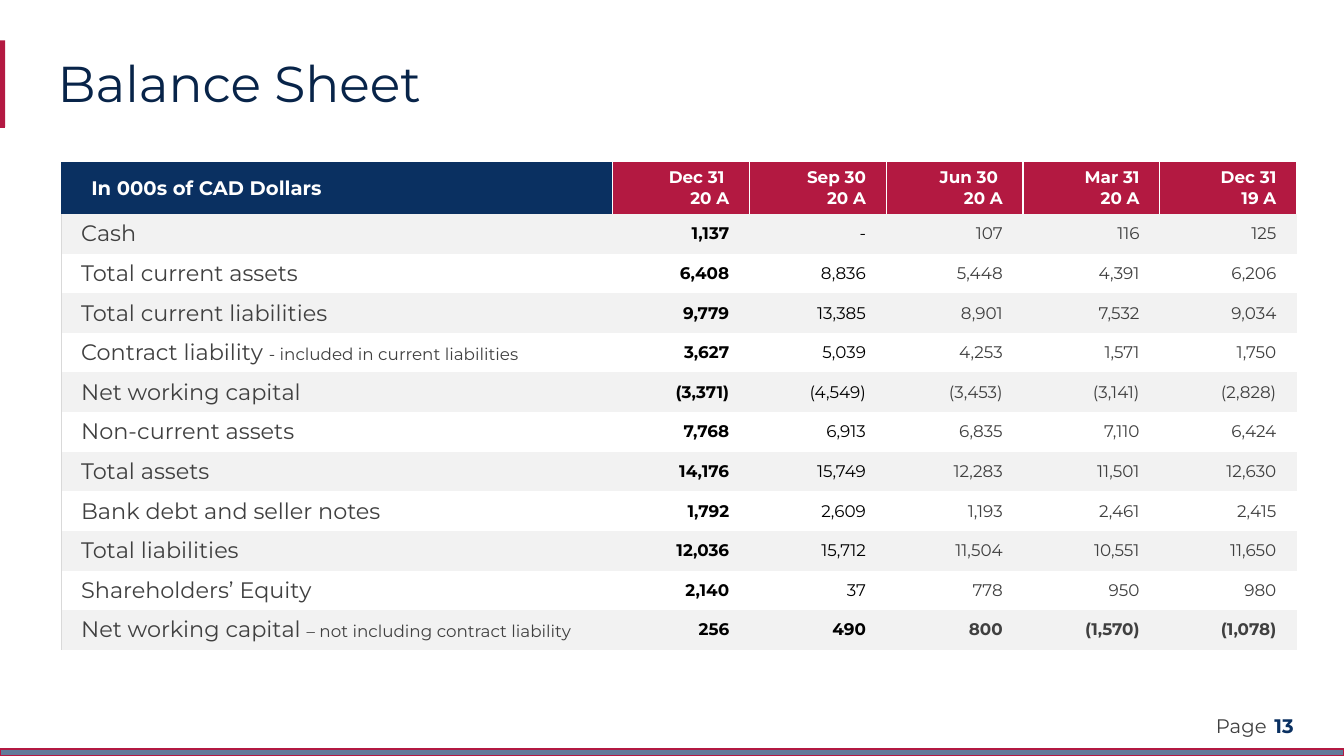
from dataclasses import dataclass
from typing import NamedTuple

from lxml import etree
from pptx import Presentation
from pptx import util as u
from pptx.dml.color import RGBColor
from pptx.enum import shapes, text
from pptx.oxml import ns


@dataclass(frozen=True)
class Theme:
    font: str = "Montserrat"
    navy: str = "0A3061"
    title: str = "082449"
    red: str = "B31941"
    edge: str = "B31942"
    slate: str = "617B9A"
    gray: str = "404040"
    black: str = "000000"
    white: str = "FFFFFF"
    band: str = "F2F2F2"
    rule: str = "D9D9D9"
    head: int = 36
    label: int = 16
    page: int = 14
    small: int = 12


class Box(NamedTuple):
    left: float
    top: float
    width: float
    height: float


class Span(NamedTuple):
    words: str
    size: int
    color: str
    bold: bool = False


class Bar(NamedTuple):
    box: Box
    fill: str
    line: str | None = None


class Tag(NamedTuple):
    box: Box
    span: Span


class Row(NamedTuple):
    label: str
    note: str
    values: str
    bold: bool = False


T = Theme()
WIDE, HIGH = u.Inches(13.33), u.Inches(7.5)
PLAIN = "{2D5ABB26-0587-4C30-8999-92F81FD0307C}"
GRID = Box(4.54, 21.47, 91.94, 64.49)
FIRST, REST = 41.04, 10.18
TOP, BODY = 6.85, 5.24
DATES = [("Dec 31 ", "20 A"), ("Sep 30", "20 A"), ("Jun 30 ", "20 A"),
         ("Mar 31", "20 A"), ("Dec 31", "19 A")]
ROWS = [
    Row("Cash", "", "1,137 - 107 116 125"),
    Row("Total current assets", "", "6,408 8,836 5,448 4,391 6,206"),
    Row("Total current liabilities", "", "9,779 13,385 8,901 7,532 9,034"),
    Row("Contract liability ", "- included in current liabilities",
        "3,627 5,039 4,253 1,571 1,750"),
    Row("Net working capital", "", "(3,371) (4,549) (3,453) (3,141) (2,828)"),
    Row("Non-current assets", "", "7,768 6,913 6,835 7,110 6,424"),
    Row("Total assets", "", "14,176 15,749 12,283 11,501 12,630"),
    Row("Bank debt and seller notes", "", "1,792 2,609 1,193 2,461 2,415"),
    Row("Total liabilities", "", "12,036 15,712 11,504 10,551 11,650"),
    Row("Shareholders’ Equity", "", "2,140 37 778 950 980"),
    Row("Net working capital ", "– not including contract liability",
        "256 490 800 (1,570) (1,078)", True),
]
BARS = [
    Bar(Box(0, 5.33, 0.38, 11.47), T.red),
    Bar(Box(0, 99.07, 100, 0.93), T.slate, T.edge),
]
TAGS = [
    Tag(Box(90.47, 94.4, 4.3, 3.2), Span("Page", T.page, T.gray)),
    Tag(Box(94.82, 94.4, 2.48, 3.2), Span("13", T.page, T.navy, True)),
]


def across(share: float) -> int:
    return round(WIDE * share / 100)


def down(share: float) -> int:
    return round(HIGH * share / 100)


def place(box: Box) -> tuple[int, int, int, int]:
    return across(box.left), down(box.top), across(box.width), down(box.height)


def tint(name: str) -> RGBColor:
    return RGBColor.from_string(name)


def write(par, *spans: Span) -> None:
    for span in spans:
        run = par.add_run()
        run.text = span.words
        run.font.name = T.font
        run.font.size = u.Pt(span.size)
        run.font.bold = span.bold
        run.font.color.rgb = tint(span.color)


def border(cell, sides: str, color: str, points: float) -> None:
    props = cell._tc.get_or_add_tcPr()
    for spot, side in enumerate(sides):
        line = etree.Element(ns.qn(f"a:ln{side}"), w=str(u.Pt(points)))
        fill = etree.SubElement(line, ns.qn("a:solidFill"))
        etree.SubElement(fill, ns.qn("a:srgbClr"), val=color)
        props.insert(spot, line)


def fill_cell(cell, lines: list[list[Span]], color: str,
              right: bool = False, pad: tuple[float, float] = (0.2, 0.2),
              middle: bool = True) -> None:
    cell.margin_left, cell.margin_right = map(u.Inches, pad)
    cell.margin_top = cell.margin_bottom = u.Inches(0.05)
    cell.vertical_anchor = (text.MSO_ANCHOR.MIDDLE if middle
                            else text.MSO_ANCHOR.TOP)
    cell.fill.solid()
    cell.fill.fore_color.rgb = tint(color)
    frame = cell.text_frame
    for spot, spans in enumerate(lines):
        par = frame.add_paragraph() if spot else frame.paragraphs[0]
        par.alignment = text.PP_ALIGN.RIGHT if right else text.PP_ALIGN.LEFT
        write(par, *spans)


def draw_bar(slide, bar: Bar) -> None:
    shape = slide.shapes.add_shape(shapes.MSO_SHAPE.RECTANGLE, *place(bar.box))
    shape.shadow.inherit = False
    shape.fill.solid()
    shape.fill.fore_color.rgb = tint(bar.fill)
    if bar.line:
        shape.line.color.rgb = tint(bar.line)
        shape.line.width = u.Pt(1)
    else:
        shape.line.fill.background()


def draw_edge(slide) -> None:
    line = slide.shapes.add_connector(
        shapes.MSO_CONNECTOR.STRAIGHT,
        across(0.15), down(16.93), across(0.15), down(9.07))
    line.line.color.rgb = tint(T.edge)
    line.line.width = u.Pt(4)
    etree.SubElement(line._element.spPr, ns.qn("a:effectLst"))


def draw_tag(slide, tag: Tag) -> None:
    frame = slide.shapes.add_textbox(*place(tag.box)).text_frame
    frame.margin_left = frame.margin_right = 0
    frame.margin_top = frame.margin_bottom = 0
    frame.vertical_anchor = text.MSO_ANCHOR.MIDDLE
    frame.word_wrap = True
    write(frame.paragraphs[0], tag.span)


def draw_title(slide) -> None:
    title = slide.shapes.title
    title.left, title.top, title.width, title.height = place(
        Box(3.53, 7.07, 93.02, 8.67))
    title.text_frame.vertical_anchor = text.MSO_ANCHOR.MIDDLE
    par = title.text_frame.paragraphs[0]
    par.alignment = text.PP_ALIGN.LEFT
    par.line_spacing = 0.9
    write(par, Span("Balance Sheet", T.head, T.title))


def draw_table(slide) -> None:
    table = slide.shapes.add_table(
        len(ROWS) + 1, len(DATES) + 1, *place(GRID)).table
    table._tbl.tblPr.find(ns.qn("a:tableStyleId")).text = PLAIN
    table.horz_banding = False
    for spot, col in enumerate(table.columns):
        col.width = across(REST if spot else FIRST)
    for spot, row in enumerate(table.rows):
        row.height = down(BODY if spot else TOP)

    corner = table.cell(0, 0)
    name = Span("In 000s of CAD Dollars", T.page, T.white, True)
    fill_cell(corner, [[name]], T.navy, pad=(0.3, 0.1))
    border(corner, "R", T.white, 1)
    for col, date in enumerate(DATES, 1):
        cell = table.cell(0, col)
        lines = [[Span(part, T.small, T.white, True)] for part in date]
        fill_cell(cell, lines, T.red, right=True, middle=False)
        border(cell, "LR", T.white, 1)

    for line, row in enumerate(ROWS, 1):
        band = T.band if line % 2 else T.white
        spans = [Span(row.label, T.label, T.gray)]
        if row.note:
            spans.append(Span(row.note, T.small, T.gray))
        fill_cell(table.cell(line, 0), [spans], band)
        border(table.cell(line, 0), "L", T.rule, 0.5)
        for col, value in enumerate(row.values.split(), 1):
            color = T.black if col <= 2 else T.gray
            span = Span(value, T.small, color, row.bold or col == 1)
            fill_cell(table.cell(line, col), [[span]], band, right=True)


def main() -> None:
    deck = Presentation()
    deck.slide_width, deck.slide_height = WIDE, HIGH
    slide = deck.slides.add_slide(deck.slide_layouts[5])
    for bar in BARS:
        draw_bar(slide, bar)
    draw_edge(slide)
    draw_title(slide)
    draw_table(slide)
    for tag in TAGS:
        draw_tag(slide, tag)
    deck.save("out.pptx")


if __name__ == "__main__":
    main()
